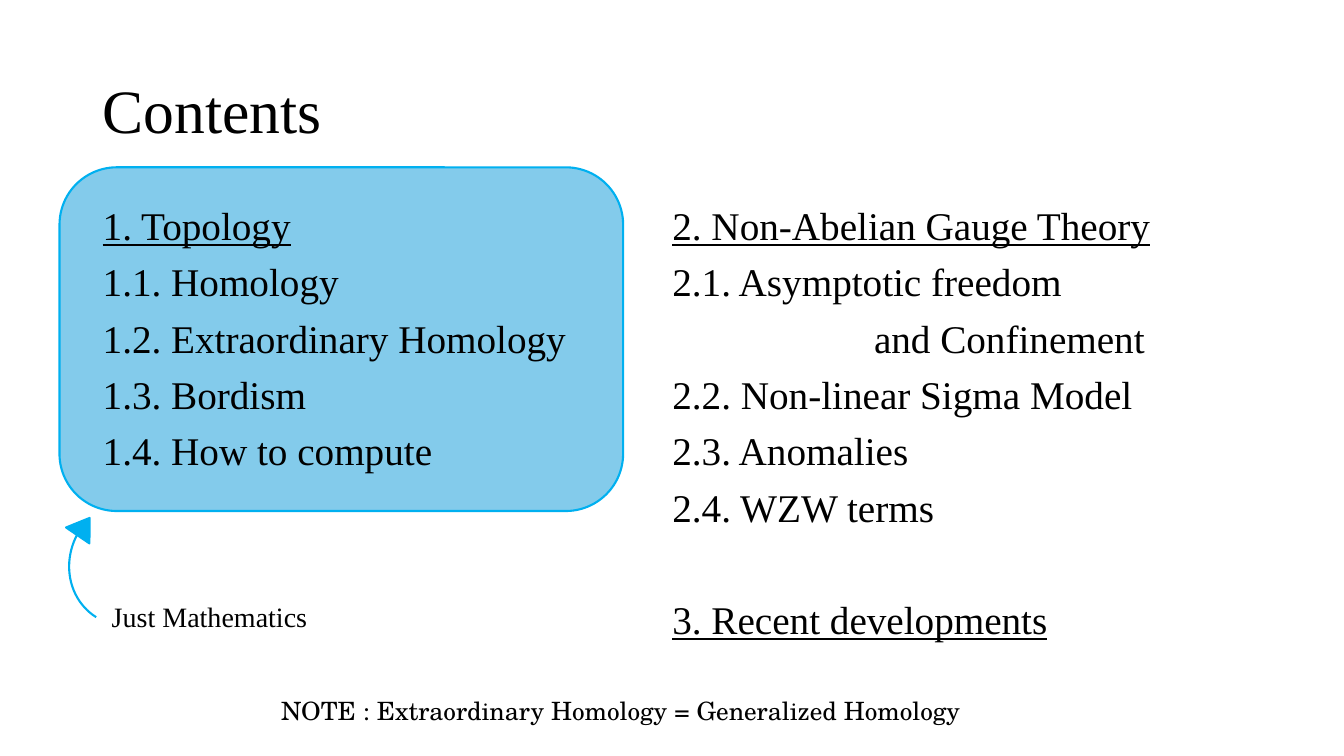
from dataclasses import dataclass

from pptx import Presentation
from pptx.dml.color import RGBColor
from pptx.enum.shapes import MSO_SHAPE
from pptx.enum.text import MSO_ANCHOR
from pptx.util import Inches, Pt

BLACK = RGBColor(0x00, 0x00, 0x00)
SKY = RGBColor(0x83, 0xCB, 0xEB)
BLUE = RGBColor(0x00, 0xB0, 0xF0)
ROUND = MSO_SHAPE.ROUNDED_RECTANGLE
ARC = MSO_SHAPE.ARC
HEAD = MSO_SHAPE.ISOSCELES_TRIANGLE
TOP = MSO_ANCHOR.TOP
MIDDLE = MSO_ANCHOR.MIDDLE
SERIF = "Times New Roman"
SCHOLA = "TeX Gyre Schola"


@dataclass
class Box:
    left: float
    top: float
    width: float
    height: float


@dataclass
class Mark:
    kind: int
    box: Box
    fill: RGBColor | None = None
    turn: float = 0


@dataclass
class Line:
    text: str
    under: bool = False
    indent: float = 0
    before: float = 10


@dataclass
class Block:
    box: Box
    lines: list[Line]
    size: float
    font: str = SERIF
    space: float = 1
    anchor: int = TOP


MARKS = [
    Mark(ROUND, Box(0.59, 1.66, 5.59, 3.41), SKY),
    Mark(ARC, Box(0.7, 4.93, 1.19, 1.29), turn=211.9),
    Mark(HEAD, Box(0.69, 5.12, 0.28, 0.21), BLUE, 34.3),
]

MATH = [
    Line("1. Topology", under=True),
    Line("1.1. Homology"),
    Line("1.2. Extraordinary Homology"),
    Line("1.3. Bordism"),
    Line("1.4. How to compute"),
]
GAUGE = [
    Line("2. Non-Abelian Gauge Theory", under=True),
    Line("2.1. Asymptotic freedom"),
    Line("and Confinement", indent=2),
    Line("2.2. Non-linear Sigma Model"),
    Line("2.3. Anomalies"),
    Line("2.4. WZW terms"),
    Line("3. Recent developments", under=True, before=50),
]
NOTE = "NOTE : Extraordinary Homology = Generalized Homology"

BLOCKS = [
    Block(Box(0.92, 0.4, 11.5, 1.45), [Line("Contents", before=0)], 44,
          space=0.9, anchor=MIDDLE),
    Block(Box(0.92, 2, 5.65, 5), MATH, 28, space=0.9),
    Block(Box(6.57, 2, 5.85, 5), GAUGE, 28, space=0.9),
    Block(Box(1.01, 5.9, 3.08, 0.44), [Line("Just Mathematics", before=0)], 20),
    Block(Box(2.69, 6.85, 7, 0.4), [Line(NOTE, before=0)], 18, SCHOLA),
]


def place(box: Box) -> list[int]:
    return [Inches(n) for n in (box.left, box.top, box.width, box.height)]


def draw_mark(slide, mark: Mark) -> None:
    shape = slide.shapes.add_shape(mark.kind, *place(mark.box))
    shape.shadow.inherit = False
    shape.rotation = mark.turn
    shape.line.color.rgb = BLUE
    shape.line.width = Pt(1.5)
    if mark.fill is None:
        shape.fill.background()
    else:
        shape.fill.solid()
        shape.fill.fore_color.rgb = mark.fill


def draw_block(slide, block: Block) -> None:
    frame = slide.shapes.add_textbox(*place(block.box)).text_frame
    frame.word_wrap = True
    frame.vertical_anchor = block.anchor
    frame.text = "\n".join(line.text for line in block.lines)
    for para, line in zip(frame.paragraphs, block.lines):
        para.line_spacing = block.space
        para.space_before = Pt(line.before)
        if line.indent:
            para._p.get_or_add_pPr().set("marL", str(Inches(line.indent)))
        font = para.runs[0].font
        font.name = block.font
        font.size = Pt(block.size)
        font.color.rgb = BLACK
        font.underline = line.under


def main() -> None:
    deck = Presentation()
    deck.slide_width = Inches(13.33)
    deck.slide_height = Inches(7.5)
    slide = deck.slides.add_slide(deck.slide_layouts[6])
    for mark in MARKS:
        draw_mark(slide, mark)
    for block in BLOCKS:
        draw_block(slide, block)
    deck.save("out.pptx")


if __name__ == "__main__":
    main()
